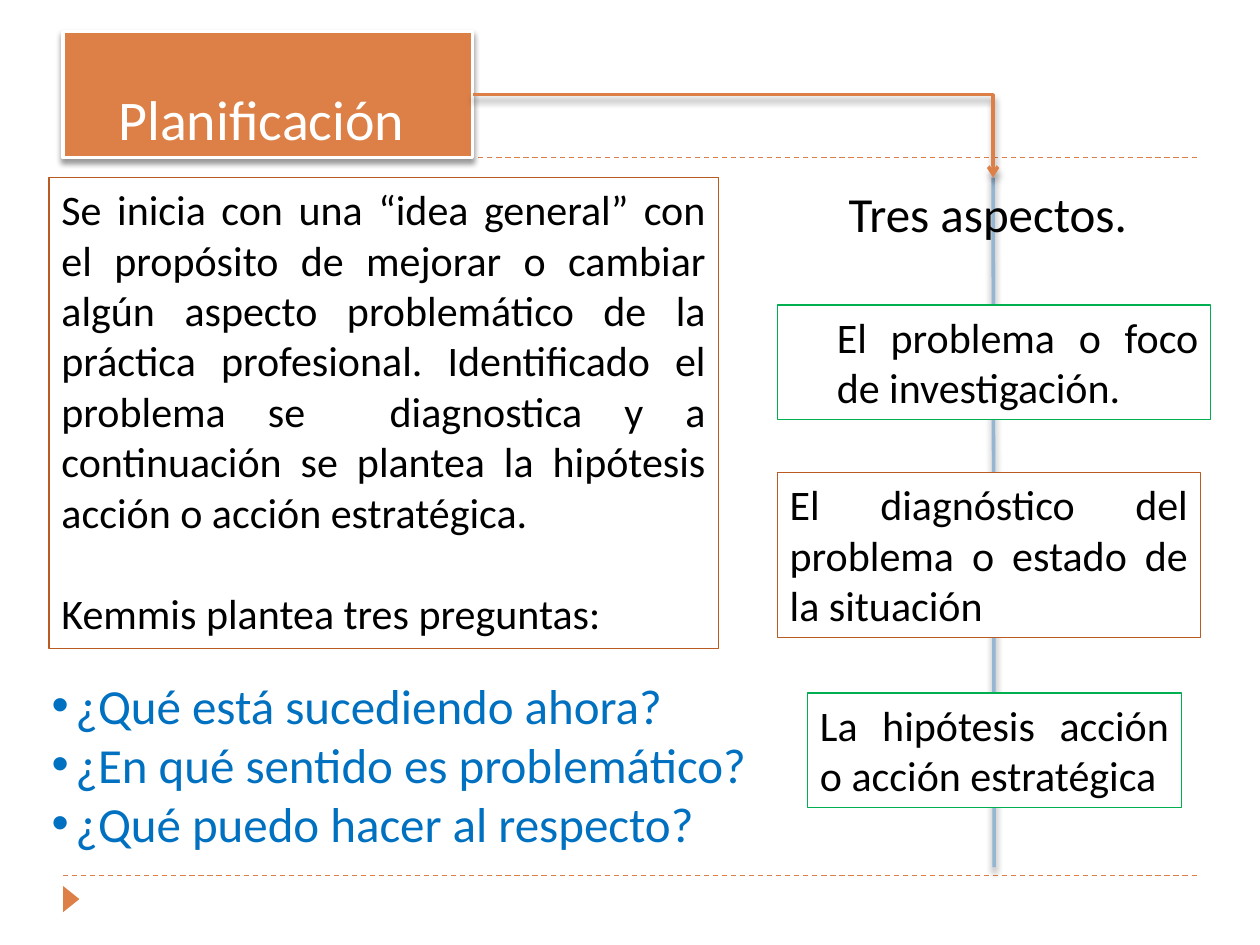
from lxml.etree import SubElement
from pptx import Presentation
from pptx.dml.color import RGBColor
from pptx.enum.dml import MSO_LINE
from pptx.enum.shapes import MSO_CONNECTOR, MSO_SHAPE
from pptx.enum.text import MSO_ANCHOR, PP_ALIGN
from pptx.oxml.ns import qn
from pptx.util import Cm, Pt

ORANGE, RUST, GREEN = "DD8047", "B95B22", "00B050"
BLUE, STEEL, WHITE, BLACK = "0070C0", "94B6D2", "FFFFFF", "000000"
LEFT, RIGHT, SPINE = 1.27, 24.13, 20.02
TOP, BASE, START = 3.18, 17.65, 3.58

TITLE = ["Planificación "]
IDEA = [
    "Se inicia con una “idea general” con el propósito de mejorar o cambiar "
    "algún aspecto problemático de la práctica profesional. Identificado el "
    "problema se  diagnostica y a continuación se plantea la hipótesis acción "
    "o acción estratégica. ",
    "Kemmis plantea tres preguntas: ",
]
HEAD = ["Tres aspectos. "]
STEPS = [
    ("El problema o foco de investigación.", (15.67, 6.15, 8.74, 2.31), GREEN, 0.95),
    ("El diagnóstico del problema o estado de la situación",
     (15.67, 9.53, 8.53, 3.33), RUST, 0),
    ("La hipótesis acción o acción estratégica", (16.28, 13.97, 7.54, 2.31), GREEN, 0),
]
ASKS = [
    "¿Qué está sucediendo ahora? ",
    "¿En qué sentido es problemático? ",
    "¿Qué puedo hacer al respecto? ",
]


def paint(code):
    return RGBColor.from_string(code)


def shade(item, blur, drop):
    props = item._element.spPr
    list_tag = SubElement(props, qn("a:effectLst"))
    if blur:
        cast = SubElement(list_tag, qn("a:outerShdw"), blurRad=str(Pt(blur)),
                          dist=str(Pt(drop)), dir="5400000", rotWithShape="0")
        tone = SubElement(cast, qn("a:srgbClr"), val=BLACK)
        SubElement(tone, qn("a:alpha"), val="40000")


def write(shape, lines, size=24, color=BLACK, align=PP_ALIGN.JUSTIFY,
          anchor=MSO_ANCHOR.TOP, gap=0, inset=0, hang=0, mark=None):
    frame = shape.text_frame
    frame.word_wrap = True
    frame.vertical_anchor = anchor
    for i, line in enumerate(lines):
        para = frame.paragraphs[0] if i == 0 else frame.add_paragraph()
        para.alignment = align
        para.space_before = Pt(gap if i else 0)
        props = para._p.get_or_add_pPr()
        props.set("marL", str(Cm(inset)))
        props.set("indent", str(Cm(-hang)))
        if mark:
            SubElement(props, qn("a:buFont"), typeface="Arial")
            SubElement(props, qn("a:buChar"), char=mark)
        run = para.add_run()
        run.text = line
        run.font.name = "Calibri"
        run.font.size = Pt(size)
        run.font.color.rgb = paint(color)


def box(place, fill=None, edge=None, width=0.75, kind=MSO_SHAPE.RECTANGLE):
    shape = slide.shapes.add_shape(kind, *map(Cm, place))
    shape.shadow.inherit = False
    if fill:
        shape.fill.solid()
        shape.fill.fore_color.rgb = paint(fill)
    else:
        shape.fill.background()
    if edge:
        shape.line.color.rgb = paint(edge)
        shape.line.width = Pt(width)
    else:
        shape.line.fill.background()
    return shape


def link(ends, color, width, kind=MSO_CONNECTOR.STRAIGHT, blur=0, drop=0):
    line = slide.shapes.add_connector(kind, *map(Cm, ends))
    line.line.color.rgb = paint(color)
    line.line.width = Pt(width)
    shade(line, blur, drop)
    return line


deck = Presentation()
deck.slide_width, deck.slide_height = Cm(25.4), Cm(19.05)
slide = deck.slides.add_slide(deck.slide_layouts[6])

for y in (BASE, TOP):
    rule = link((LEFT, y, RIGHT, y), ORANGE, 0.75)
    rule.line.dash_style = MSO_LINE.DASH
flag = box((1.17, 17.96, 0.53, 0.33), ORANGE, kind=MSO_SHAPE.ISOSCELES_TRIANGLE)
flag.rotation = 90

link((SPINE, START, SPINE + 0.02, 17.48), STEEL, 2, blur=4, drop=3.4)

write(box((0.99, START, 13.49, 9.5), edge=RUST), IDEA, gap=29)

title = box((LEFT, 0.64, 8.26, 2.54), ORANGE, WHITE, 2)
title._element.spPr.remove(title._element.spPr.find(qn("a:effectLst")))
shade(title, 3, 2)
write(title, TITLE, size=32, color=WHITE, align=PP_ALIGN.CENTER,
      anchor=MSO_ANCHOR.BOTTOM)

head = slide.shapes.add_textbox(*map(Cm, (16.28, START, 7.49, 1.8)))
write(head, HEAD, size=28, align=PP_ALIGN.CENTER)

for text, place, edge, inset in STEPS:
    write(box(place, WHITE, edge), [text], inset=inset)

asks = slide.shapes.add_textbox(*map(Cm, (0.79, 13.49, 16.66, 3.84)))
write(asks, ASKS, size=28, color=BLUE, inset=0.48, hang=0.48, mark="•")

bend = link((LEFT + 8.26, 1.91, SPINE, START), ORANGE, 2,
            kind=MSO_CONNECTOR.ELBOW, blur=4, drop=3.4)
bend._element.spPr.find(qn("a:prstGeom")).set("prst", "bentConnector2")
SubElement(bend.line._get_or_add_ln(), qn("a:tailEnd"), type="arrow")

deck.save("out.pptx")
